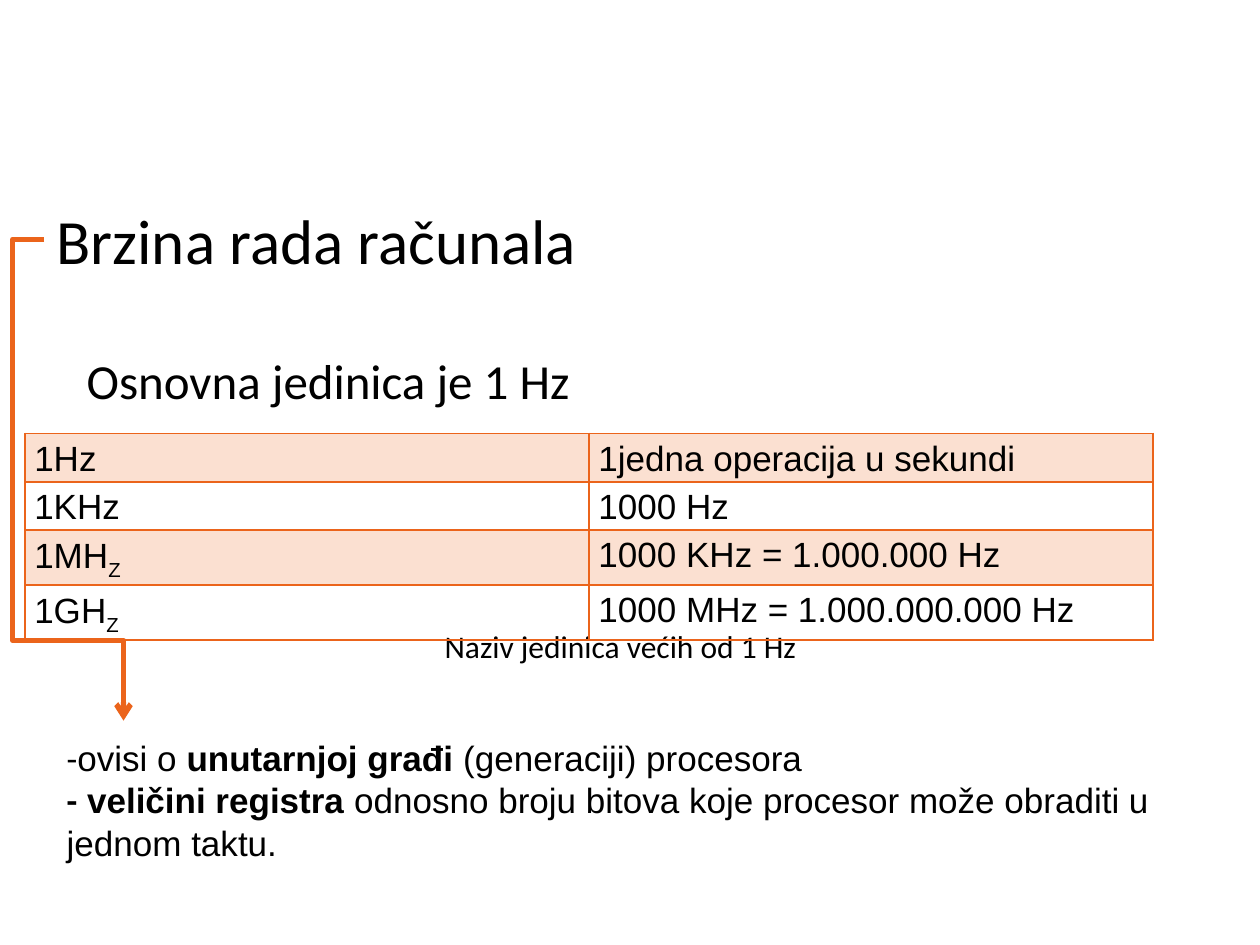
from lxml import etree
from pptx import Presentation
from pptx.dml.color import RGBColor
from pptx.enum.shapes import MSO_CONNECTOR
from pptx.enum.text import MSO_AUTO_SIZE, PP_ALIGN
from pptx.oxml.ns import qn
from pptx.util import Pt

ELBOW = MSO_CONNECTOR.ELBOW
FIT_SHAPE = MSO_AUTO_SIZE.SHAPE_TO_FIT_TEXT
JUSTIFY = PP_ALIGN.JUSTIFY
ORANGE, BLACK = "EB641B", "000000"

UNITS = [
    (["1Hz"], ["1jedna operacija u sekundi"]),
    (["1KHz"], ["1000 Hz"]),
    (["1MH", ("Z", {"baseline": -25})], ["1000 KHz = 1.000.000 Hz"]),
    (["1GH", ("Z", {"baseline": -25})], ["1000 MHz = 1.000.000.000 Hz"]),
]
FACTORS = [
    [("-", {"font": "Calibri"}), "ovisi o ", ("unutarnjoj građi ", {"bold": True}),
     "(generaciji) procesora"],
    [("-", {"font": "Calibri", "bold": True}), (" veličini registra ", {"bold": True}),
     "odnosno broju bitova koje procesor može obraditi u jednom taktu."],
]


def color(value):
    return RGBColor.from_string(value)


def add_run(paragraph, text, size=20, font="Arial", bold=False, baseline=0):
    """Add formatted text; baseline is a percentage, negative for subscript."""
    run = paragraph.add_run()
    run.text = text
    run.font.size, run.font.name, run.font.bold = Pt(size), font, bold
    run.font.color.rgb = color(BLACK)
    if baseline:
        run.font._element.set("baseline", str(baseline * 1000))


def fill_paragraph(paragraph, parts, **style):
    """Add parts, each a string or a (string, own format) pair."""
    for part in parts:
        text, own = (part, {}) if isinstance(part, str) else part
        add_run(paragraph, text, **{**style, **own})


def add_text(slide, box, paragraphs, wrap=False, **style):
    frame = slide.shapes.add_textbox(*map(Pt, box)).text_frame
    frame.word_wrap = wrap
    frame.auto_size = FIT_SHAPE
    for index, parts in enumerate(paragraphs):
        paragraph = frame.add_paragraph() if index else frame.paragraphs[0]
        fill_paragraph(paragraph, parts, **style)


def set_borders(cell, value, width):
    properties = cell._tc.get_or_add_tcPr()
    for position, side in enumerate(("a:lnL", "a:lnR", "a:lnT", "a:lnB")):
        line = etree.Element(qn(side), w=str(Pt(width)))
        fill = etree.SubElement(line, qn("a:solidFill"))
        etree.SubElement(fill, qn("a:srgbClr"), val=value)
        properties.insert(position, line)


def shade_cell(cell, value, opacity):
    cell.fill.solid()
    cell.fill.fore_color.rgb = color(value)
    tint = cell._tc.tcPr.find(qn("a:solidFill")).find(qn("a:srgbClr"))
    etree.SubElement(tint, qn("a:alpha"), val=str(opacity * 1000))


def add_unit_table(slide, box, row_height=21):
    table = slide.shapes.add_table(len(UNITS), 2, *map(Pt, box)).table
    table.first_row = table.horz_banding = False
    for column in table.columns:
        column.width = Pt(box[2] / 2)
    for row_index, (row, contents) in enumerate(zip(table.rows, UNITS)):
        row.height = Pt(row_height)
        for cell, parts in zip(row.cells, contents):
            cell.margin_left = cell.margin_right = Pt(5.4)
            cell.margin_top = cell.margin_bottom = 0
            paragraph = cell.text_frame.paragraphs[0]
            paragraph.alignment = JUSTIFY
            paragraph.line_spacing = 1.15
            fill_paragraph(paragraph, parts)
            if row_index % 2 == 0:
                shade_cell(cell, ORANGE, 20)
            else:
                cell.fill.background()
            set_borders(cell, ORANGE, 1)


def add_bent_arrow(slide, box, bend_x, bend_y):
    """Run from top left to bottom right of the box, bending at the given x and y."""
    left, top, width, height = box
    connector = slide.shapes.add_connector(
        ELBOW, Pt(left), Pt(top), Pt(left + width), Pt(top + height))
    connector.line.color.rgb = color(ORANGE)
    connector.line.width = Pt(3)
    properties = connector._element.spPr
    geometry = properties.find(qn("a:prstGeom"))
    geometry.set("prst", "bentConnector4")
    guides = geometry.find(qn("a:avLst"))
    ratios = ((bend_x - left) / width, (bend_y - top) / height)
    for number, ratio in enumerate(ratios, 1):
        etree.SubElement(guides, qn("a:gd"), name=f"adj{number}",
                         fmla=f"val {round(ratio * 100000)}")
    etree.SubElement(properties.find(qn("a:ln")), qn("a:tailEnd"), type="arrow")
    etree.SubElement(properties, qn("a:effectLst"))


def main():
    presentation = Presentation()
    presentation.slide_width, presentation.slide_height = Pt(720), Pt(540)
    slide = presentation.slides.add_slide(presentation.slide_layouts[6])
    add_text(slide, (25.2, 111.6, 322.6, 51), [["Brzina rada računala"]],
             size=36, font="Calibri")
    add_text(slide, (42.5, 196.6, 300.2, 41), [["Osnovna jedinica je 1 Hz"]],
             size=28, font="Calibri")
    add_text(slide, (247, 355, 222.5, 29), [["Naziv jedinica većih od 1 Hz"]],
             size=18, font="Calibri")
    add_unit_table(slide, (14.2, 247.7, 644.8, 84))
    add_text(slide, (31, 417.6, 646.6, 80), FACTORS, wrap=True)
    add_bent_arrow(slide, (25.2, 136.8, 45.4, 275), bend_x=7.2, bend_y=365.8)
    presentation.save("out.pptx")


if __name__ == "__main__":
    main()
